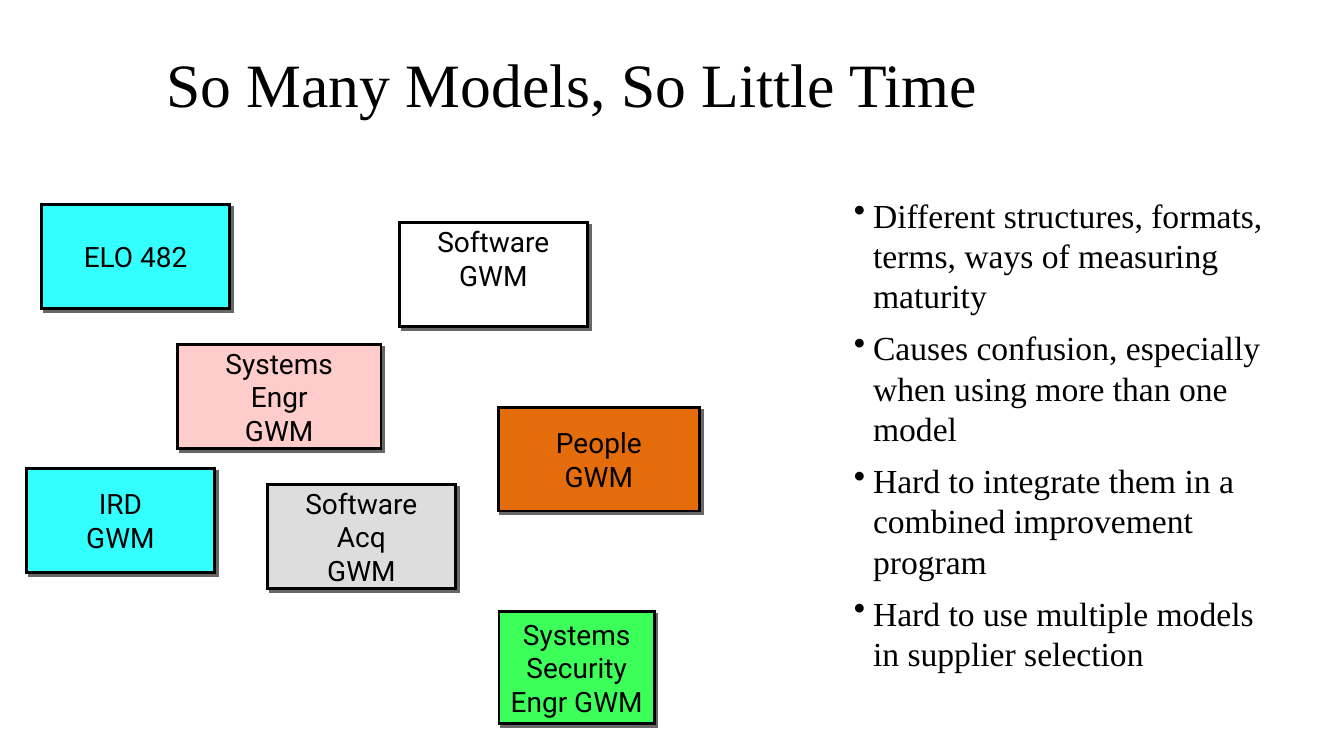
from dataclasses import dataclass
from typing import Any

from lxml.etree import SubElement as Sub
from pptx import Presentation
from pptx.dml.color import RGBColor as RGB
from pptx.enum.shapes import MSO_SHAPE as Shp
from pptx.enum.text import MSO_ANCHOR as Anchor, PP_ALIGN as Align
from pptx.oxml.ns import qn
from pptx.util import Inches, Pt


@dataclass(frozen=True)
class Theme:
    serif: str = "Times New Roman"
    sans: str = "Roboto"
    title: int = 44
    body: int = 24
    label: int = 20
    ink: str = "000000"
    shadow: str = "676767"
    white: str = "FFFFFF"
    green: str = "3DFF59"
    pink: str = "FFCCCC"
    orange: str = "E46C0A"
    cyan: str = "34FFFF"
    grey: str = "DDDDDD"


@dataclass(frozen=True)
class Area:
    x: float
    y: float
    w: float = 14.03
    h: float = 13.73


@dataclass(frozen=True)
class Model:
    text: str
    area: Area
    fill: str
    bottom: float = 0.05


T = Theme()
WIDTH, HEIGHT = Inches(13.33), Inches(7.5)
TITLE = Area(3.3, 4.4, 78.54, 13.07)
BODY = Area(62.79, 25.07, 32.48, 66.27)
MODELS = [
    Model("Software\nGWM", Area(29.7, 29.47), T.white, 0.38),
    Model("Systems\nSecurity\vEngr GWM", Area(37.13, 80.93, 11.55, 14.8), T.green),
    Model("Systems\vEngr\nGWM", Area(13.2, 45.6, 15.15), T.pink),
    Model("People\nGWM", Area(37.06, 53.87, 15), T.orange),
    Model("IRD\nGWM", Area(1.95, 62), T.cyan),
    Model("Software\vAcq\nGWM", Area(19.88, 64.13), T.grey),
    Model("ELO 482", Area(3.08, 27.07), T.cyan),
]
POINTS = [
    "Different structures, formats, terms, ways of measuring maturity",
    "Causes confusion, especially when using more than one model",
    "Hard to integrate them in a combined improvement program",
    "Hard to use multiple models in supplier selection",
]


def apply(target: Any, fmt: dict[str, Any]) -> None:
    for name, value in fmt.items():
        setattr(target, name, value)


def box(a: Area) -> tuple[int, int, int, int]:
    return (int(WIDTH * a.x / 100), int(HEIGHT * a.y / 100),
            int(WIDTH * a.w / 100), int(HEIGHT * a.h / 100))


def write(tf: Any, text: str, font: str, size: int, frame: dict[str, Any],
          para: dict[str, Any]) -> None:
    apply(tf, frame)
    tf.text = text
    for p in tf.paragraphs:
        apply(p, para)
        for r in p.runs:
            apply(r.font, {"name": font, "size": Pt(size)})
            r.font.color.rgb = RGB.from_string(T.ink)


def add_shadow(sp: Any) -> None:
    sp.shadow.inherit = False
    effects = sp._element.spPr.find(qn("a:effectLst"))
    outer = Sub(effects, qn("a:outerShdw"), dist=str(Pt(2.8)), dir="2700000",
                algn="ctr", rotWithShape="0")
    Sub(outer, qn("a:srgbClr"), val=T.shadow)


def add_model(s: Any, m: Model) -> None:
    sp = s.shapes.add_shape(Shp.RECTANGLE, *box(m.area))
    sp.fill.solid()
    sp.fill.fore_color.rgb = RGB.from_string(m.fill)
    sp.line.color.rgb = RGB.from_string(T.ink)
    sp.line.width = Pt(2)
    Sub(sp._element.spPr.find(qn("a:ln")), qn("a:miter"), lim="800000")
    add_shadow(sp)
    write(sp.text_frame, m.text, T.sans, T.label,
          {"word_wrap": False, "vertical_anchor": Anchor.MIDDLE,
           "margin_bottom": Inches(m.bottom)},
          {"alignment": Align.CENTER})


def add_title(s: Any, text: str) -> None:
    tf = s.shapes.add_textbox(*box(TITLE)).text_frame
    write(tf, text, T.serif, T.title,
          {"word_wrap": True, "vertical_anchor": Anchor.MIDDLE},
          {"alignment": Align.CENTER})


def add_points(s: Any, points: list[str]) -> None:
    tf = s.shapes.add_textbox(*box(BODY)).text_frame
    write(tf, "\n".join(points), T.serif, T.body, {"word_wrap": True},
          {"space_after": Pt(0.35 * T.body)})
    indent = Inches(0.19)
    for p in tf.paragraphs:
        ppr = p._p.get_or_add_pPr()
        ppr.set("marL", str(indent))
        ppr.set("indent", str(-indent))
        Sub(ppr, qn("a:buChar"), char="•")


def main() -> None:
    prs = Presentation()
    apply(prs, {"slide_width": WIDTH, "slide_height": HEIGHT})
    s = prs.slides.add_slide(prs.slide_layouts[6])
    add_title(s, "So Many Models, So Little Time")
    for m in MODELS:
        add_model(s, m)
    add_points(s, POINTS)
    prs.save("out.pptx")


if __name__ == "__main__":
    main()
